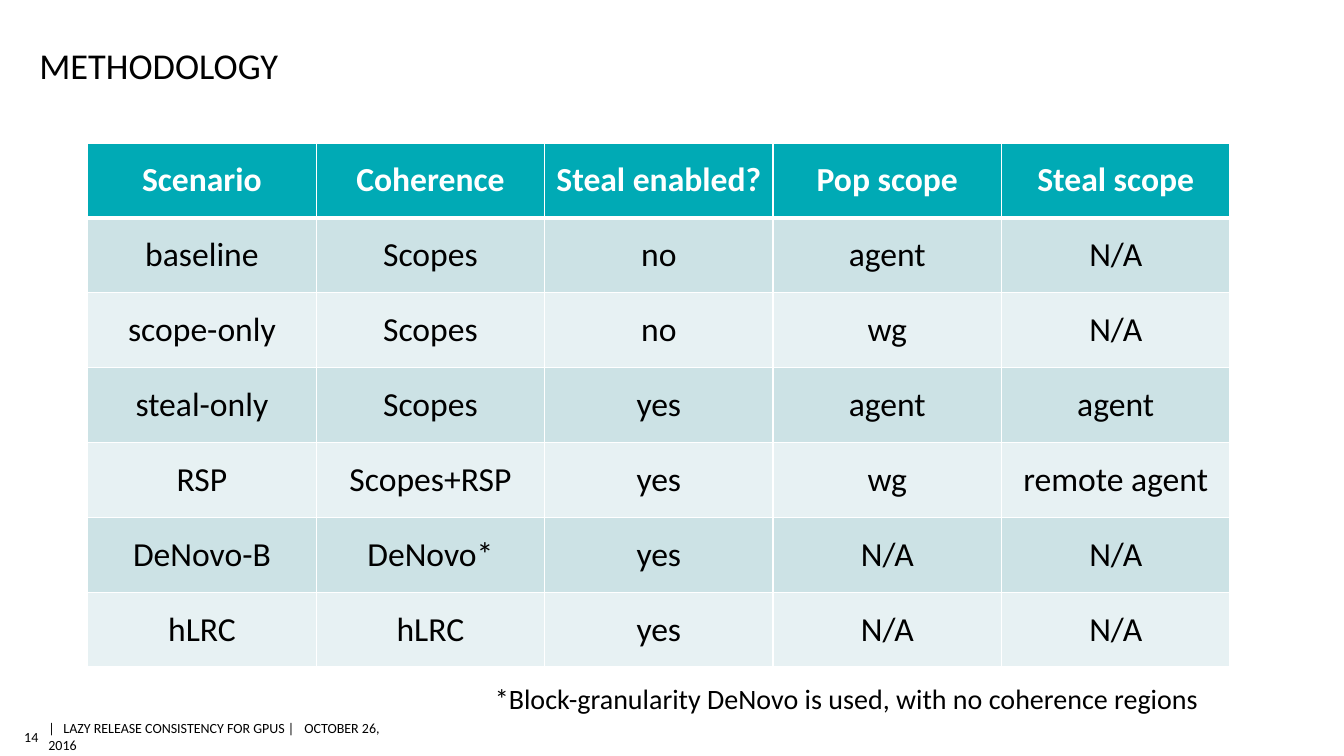
"""Builds the methodology slide with its table of stealing scenarios."""
from lxml import etree
from pptx import Presentation
from pptx.dml.color import RGBColor
from pptx.enum.text import MSO_ANCHOR, PP_ALIGN
from pptx.oxml.ns import qn
from pptx.util import Inches, Pt

COLORS = {
    "text": "000000",
    "white": "FFFFFF",
    "header": "00AAB5",
    "odd": "CCE2E5",
    "even": "E7F1F3",
}

SCENARIOS = [
    ["Scenario", "Coherence", "Steal enabled?", "Pop scope", "Steal scope"],
    ["baseline", "Scopes", "no", "agent", "N/A"],
    ["scope-only", "Scopes", "no", "wg", "N/A"],
    ["steal-only", "Scopes", "yes", "agent", "agent"],
    ["RSP", "Scopes+RSP", "yes", "wg", "remote agent"],
    ["DeNovo-B", "DeNovo*", "yes", "N/A", "N/A"],
    ["hLRC", "hLRC", "yes", "N/A", "N/A"],
]


class SlideBuilder:
    font = "Calibri"

    def __init__(self, slide):
        self.slide = slide

    def style(self, paragraph, size, color="text", bold=False, align=PP_ALIGN.LEFT):
        paragraph.alignment = align
        paragraph.font.name = self.font
        paragraph.font.size = Pt(size)
        paragraph.font.bold = bold
        paragraph.font.color.rgb = RGBColor.from_string(COLORS[color])

    def text(self, words, place, size, insets, anchor=MSO_ANCHOR.MIDDLE,
             align=PP_ALIGN.LEFT, tabs=()):
        frame = self.slide.shapes.add_textbox(*map(Inches, place)).text_frame
        frame.word_wrap = True
        frame.vertical_anchor = anchor
        (frame.margin_left, frame.margin_top,
         frame.margin_right, frame.margin_bottom) = map(Inches, insets)
        paragraph = frame.paragraphs[0]
        paragraph.text = words
        if tabs:
            stops = etree.SubElement(paragraph._p.get_or_add_pPr(), qn("a:tabLst"))
            for stop in tabs:
                etree.SubElement(stops, qn("a:tab"), pos=str(Inches(stop)), algn="l")
        self.style(paragraph, size, align=align)
        return paragraph

    def borders(self, cell, widths):
        properties = cell._tc.get_or_add_tcPr()
        for index, (side, width) in enumerate(widths.items()):
            line = etree.Element(qn(f"a:ln{side}"), w=str(Pt(width)))
            fill = etree.SubElement(line, qn("a:solidFill"))
            etree.SubElement(fill, qn("a:srgbClr"), val=COLORS["white"])
            properties.insert(index, line)

    def table(self, rows, place, size):
        table = self.slide.shapes.add_table(
            len(rows), len(rows[0]), *map(Inches, place)).table
        for r, row in enumerate(rows):
            header = r == 0
            shade = "header" if header else "odd" if r % 2 else "even"
            widths = {"L": 1, "R": 1, "T": 3 if r == 1 else 1, "B": 3 if header else 1}
            for c, words in enumerate(row):
                cell = table.cell(r, c)
                cell.vertical_anchor = MSO_ANCHOR.MIDDLE
                cell.fill.solid()
                cell.fill.fore_color.rgb = RGBColor.from_string(COLORS[shade])
                self.borders(cell, widths)
                paragraph = cell.text_frame.paragraphs[0]
                paragraph.text = words
                self.style(paragraph, size, "white" if header else "text",
                           header, PP_ALIGN.CENTER)


def main():
    presentation = Presentation()
    presentation.slide_width = Inches(13.33)
    presentation.slide_height = Inches(7.5)
    builder = SlideBuilder(presentation.slides.add_slide(presentation.slide_layouts[6]))

    footer_insets = (0, 0.04, 0, 0.04)
    builder.text("|\tLAZY RELEASE CONSISTENCY FOR GPUS |\tOCTOBER 26, 2016",
                 (0.48, 7.18, 3.46, 0.26), 10, footer_insets, tabs=(0.15, 2.54))
    builder.text("14", (0.22, 7.18, 0.16, 0.26), 10, footer_insets, align=PP_ALIGN.RIGHT)
    builder.text("METHODOLOGY", (0.39, 0.34, 11.2, 0.52), 26, (0, 0.05, 0, 0),
                 anchor=MSO_ANCHOR.BOTTOM)
    builder.table(SCENARIOS, (0.87, 1.42, 11.33, 5.2), 24)
    footnote = builder.text(
        "*Block-granularity DeNovo is used, with no coherence regions",
        (4.81, 6.75, 8.35, 0.4), 20, (0.1, 0.05, 0.1, 0.05))
    footnote.line_spacing = 0.9
    footnote.space_after = Pt(3)

    presentation.save("out.pptx")


if __name__ == "__main__":
    main()
